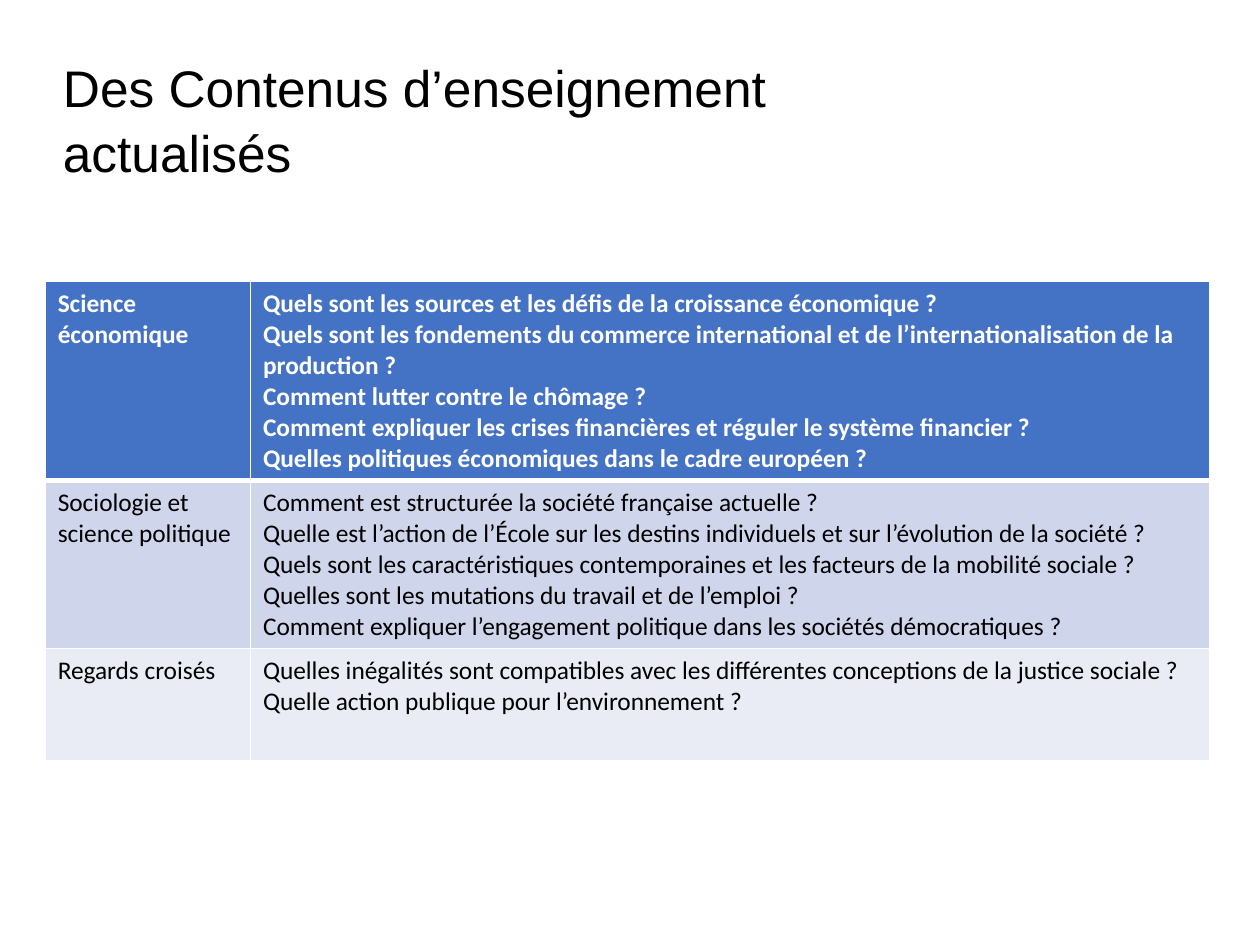
from lxml import etree
from pptx import Presentation
from pptx.dml.color import RGBColor
from pptx.enum.text import MSO_ANCHOR, MSO_AUTO_SIZE, PP_ALIGN
from pptx.oxml.ns import qn
from pptx.util import Pt

LEFT, TOP, MIDDLE = PP_ALIGN.LEFT, MSO_ANCHOR.TOP, MSO_ANCHOR.MIDDLE
NO_FIT = MSO_AUTO_SIZE.NONE
TITLE_ONLY = 5
COLORS = {"black": "000000", "white": "FFFFFF", "header": "4472C4",
          "band": "CFD5EA", "pale": "E9EBF5"}

TITLE = "Des Contenus d’enseignement actualisés"
COLUMN_WIDTHS = [129.3, 604.4]
ROW_HEIGHTS = [121, 102, 71]
ROW_FILLS = ["header", "band", "pale"]
THEMES = [
    ("Science économique", [
        "Quels sont les sources et les défis de la croissance économique ?",
        "Quels sont les fondements du commerce international et de "
        "l’internationalisation de la production ?",
        "Comment lutter contre le chômage ?",
        "Comment expliquer les crises financières et réguler le système financier ?",
        "Quelles politiques économiques dans le cadre européen ?"]),
    ("Sociologie et science politique", [
        "Comment est structurée la société française actuelle ?",
        "Quelle est l’action de l’École sur les destins individuels et sur "
        "l’évolution de la société ?",
        "Quels sont les caractéristiques contemporaines et les facteurs de la "
        "mobilité sociale ?",
        "Quelles sont les mutations du travail et de l’emploi ?",
        "Comment expliquer l’engagement politique dans les sociétés démocratiques ?"]),
    ("Regards croisés", [
        "Quelles inégalités sont compatibles avec les différentes conceptions "
        "de la justice sociale ?",
        "Quelle action publique pour l’environnement ?"]),
]


def apply(target, values):
    for name, value in values.items():
        setattr(target, name, value)


def rgb(color):
    return RGBColor.from_string(COLORS[color])


class Page:
    title_font = {"name": "Arial", "size": Pt(32.4), "bold": False}
    cell_font = {"name": "Calibri", "size": Pt(16)}
    cell_format = {"margin_left": Pt(8), "margin_right": Pt(8), "margin_top": Pt(4),
                   "margin_bottom": Pt(4), "vertical_anchor": TOP}

    def __init__(self, deck):
        self.slide = deck.slides.add_slide(deck.slide_layouts[TITLE_ONLY])

    def title(self, text, left, top, width, height):
        box = self.slide.shapes.title
        apply(box, {"left": Pt(left), "top": Pt(top),
                    "width": Pt(width), "height": Pt(height)})
        apply(box.text_frame, {"text": text, "word_wrap": True, "auto_size": NO_FIT,
                               "vertical_anchor": MIDDLE, "margin_left": 0,
                               "margin_right": 0, "margin_top": 0, "margin_bottom": 0})
        para = box.text_frame.paragraphs[0]
        apply(para, {"alignment": LEFT, "line_spacing": 1.05})
        apply(para.font, self.title_font)
        para.font.color.rgb = rgb("black")

    def border(self, cell, side, width):
        line = etree.SubElement(cell._tc.get_or_add_tcPr(), qn(f"a:ln{side}"),
                                w=str(Pt(width)))
        fill = etree.SubElement(line, qn("a:solidFill"))
        etree.SubElement(fill, qn("a:srgbClr"), val=COLORS["white"])

    def cell(self, cell, lines, fill, row):
        header = row == 0
        apply(cell, self.cell_format)
        widths = {"L": 1, "R": 1, "T": 3 if row == 1 else 1, "B": 3 if header else 1}
        for side, width in widths.items():
            self.border(cell, side, width)
        cell.fill.solid()
        cell.fill.fore_color.rgb = rgb(fill)
        cell.text_frame.text = "\n".join(lines)
        for para in cell.text_frame.paragraphs:
            para.alignment = LEFT
            apply(para.font, {**self.cell_font, "bold": header})
            para.font.color.rgb = rgb("white" if header else "black")

    def table(self, themes, left, top):
        table = self.slide.shapes.add_table(
            len(themes), len(COLUMN_WIDTHS), Pt(left), Pt(top),
            Pt(sum(COLUMN_WIDTHS)), Pt(sum(ROW_HEIGHTS))).table
        for column, width in zip(table.columns, COLUMN_WIDTHS):
            column.width = Pt(width)
        for row, (theme, questions) in enumerate(themes):
            table.rows[row].height = Pt(ROW_HEIGHTS[row])
            for column, lines in enumerate([[theme], questions]):
                self.cell(table.cell(row, column), lines, ROW_FILLS[row], row)


def main():
    deck = Presentation()
    apply(deck, {"slide_width": Pt(793.7), "slide_height": Pt(595.3)})
    page = Page(deck)
    page.title(TITLE, 39.6, 46, 566.9, 57)
    page.table(THEMES, 28.4, 177.3)
    deck.save("out.pptx")


if __name__ == "__main__":
    main()
